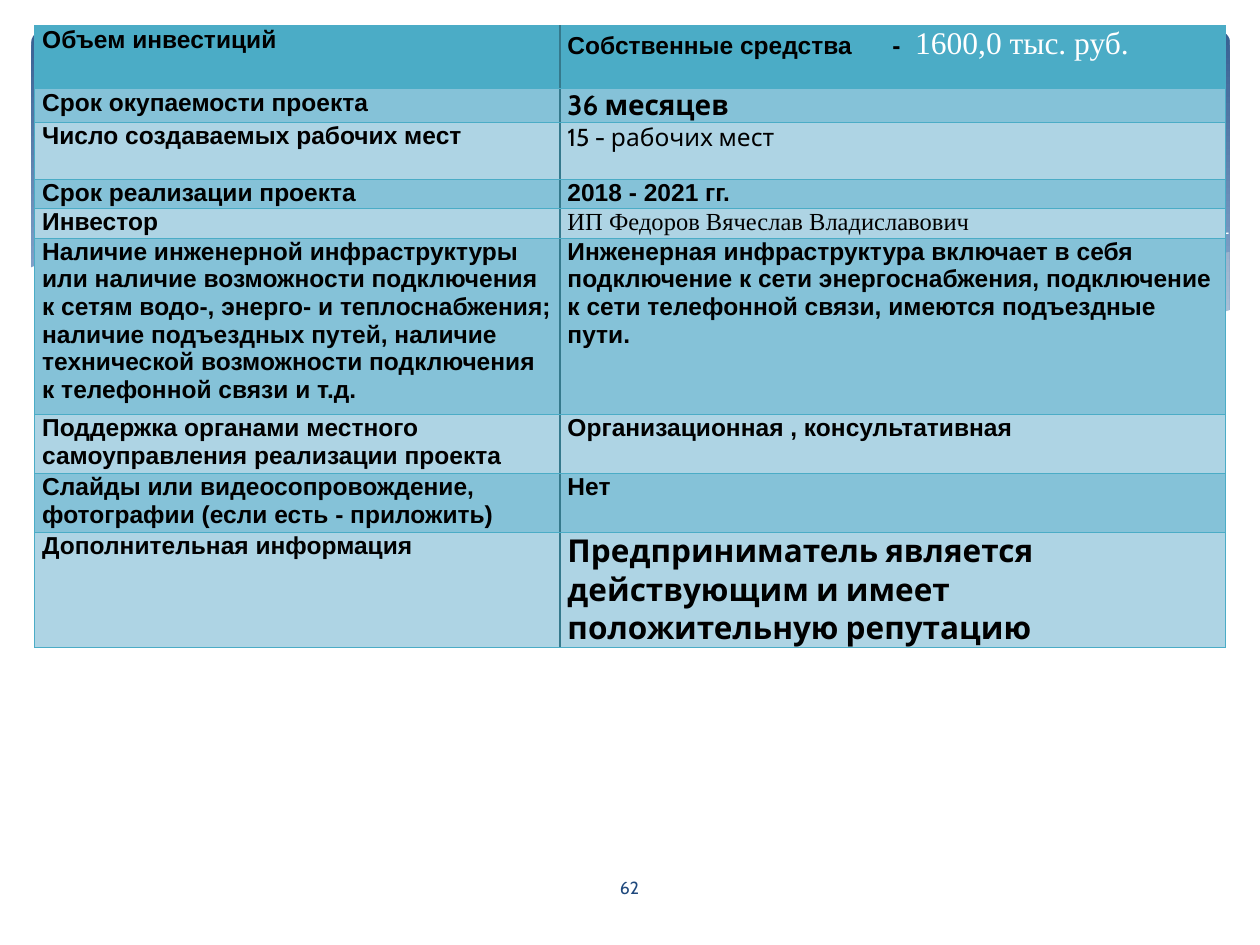
from lxml.etree import SubElement
from pptx import Presentation
from pptx.dml.color import RGBColor
from pptx.enum.shapes import MSO_SHAPE
from pptx.enum.text import MSO_ANCHOR, PP_ALIGN
from pptx.oxml.ns import qn
from pptx.util import Pt


def rgb(value):
    return RGBColor.from_string(value)


def add_run(p, text, font, size, bold, color):
    r = p.add_run()
    r.text = text
    r.font.name = font
    r.font.size = Pt(size)
    r.font.bold = bold
    r.font.color.rgb = rgb(color)


prs = Presentation()
prs.slide_width, prs.slide_height = Pt(720), Pt(540)
s = prs.slides.add_slide(prs.slide_layouts[6])

sp = s.shapes.add_shape(MSO_SHAPE.ROUNDED_RECTANGLE, Pt(18), Pt(18), Pt(684.7), Pt(194.4))
sp.adjustments[0] = 0.03
sp.shadow.inherit = False
sp.line.fill.background()
sp.fill.gradient()
sp.fill.gradient_angle = 270
for stop, (pos, color) in zip(sp.fill.gradient_stops, [(0, "376092"), (0.9, "95B3D7")]):
    stop.position = pos
    stop.color.rgb = rgb(color)

waves = [
    ("EEECE1", 29, [(702.7, 144), (682, 147), (652, 153), (620, 161), (561, 174), (476, 191),
                    (508, 195), (545, 198.5), (586, 200), (628, 197), (668, 190), (702.7, 178)]),
    ("EEECE1", 40, [(643, 197), (603, 191), (558, 183), (508, 173), (453, 160), (410, 150),
                    (370, 143), (335, 137.5), (302, 134), (260, 133), (225, 135.5), (206, 137.5),
                    (246, 143), (291, 152), (354, 167), (420, 181), (468, 190), (510, 196),
                    (548, 199), (589, 200), (624, 199)]),
    ("FFFFFF", 100, [(703.4, 177), (670, 188.5), (639, 195), (602, 198.5), (560, 199), (510, 195.5),
                     (451, 186), (381, 172), (322, 158), (263, 145), (210, 137), (166, 133),
                     (127, 132.5), (86, 135), (55, 140.5), (33, 146), (16.6, 153.4),
                     (16.6, 236.9), (703.4, 236.9)]),
]
curves = [
    [(222.5, 140.4), (241, 137), (278, 134.5), (325, 135), (384, 139.5), (438, 147),
     (500, 157.5), (547, 167.8), (598, 180.5), (653, 195.8)],
    [(441.4, 185), (484, 173.5), (538, 160.5), (602, 147), (644, 139.5), (685, 134.5), (702, 133.2)],
]
outlines = waves[:2] + [(None, 0, points) for points in curves] + waves[2:]
for color, alpha, points in outlines:
    points = [(Pt(x), Pt(y)) for x, y in points]
    builder = s.shapes.build_freeform(*points[0])
    builder.add_line_segments(points[1:], close=color is not None)
    sp = builder.convert_to_shape()
    sp.shadow.inherit = False
    if color:
        sp.line.fill.background()
        sp.fill.solid()
        sp.fill.fore_color.rgb = rgb(color)
        if alpha < 100:
            clr = sp.fill._xPr.find(qn("a:solidFill"))[0]
            SubElement(clr, qn("a:alpha"), val=str(alpha * 1000))
    else:
        sp.fill.background()
        sp.line.color.rgb = rgb("FFFFFF")
        sp.line.width = Pt(0)

sp = s.shapes.add_textbox(Pt(314), Pt(492.5), Pt(91.4), Pt(28.8))
tf = sp.text_frame
tf.word_wrap = True
tf.vertical_anchor = MSO_ANCHOR.MIDDLE
p = tf.paragraphs[0]
p.alignment = PP_ALIGN.CENTER
add_run(p, "62", "Cabin", 10, False, "1F497D")

arial = ("Arial", 14, True, "000000")
rows = [
    (36, "Объем инвестиций", [("Собственные средства\t-\t", *arial),
                              ("1600,0 тыс. руб.", "Times New Roman", 18, False, "FFFFFF")]),
    (19.2, "Срок окупаемости проекта", [("36 месяцев", "Cabin", 16, True, "000000")]),
    (32.4, "Число создаваемых рабочих мест", [("15 - рабочих мест", "Cabin", 14, False, "000000")]),
    (16, "Срок реализации проекта", [("2018 - 2021 гг.", *arial)]),
    (16, "Инвестор",
     [("ИП Федоров Вячеслав Владиславович", "Times New Roman", 14, False, "000000")]),
    (96.2, "Наличие инженерной инфраструктуры или наличие возможности подключения к сетям "
           "водо-, энерго- и теплоснабжения; наличие подъездных путей, наличие технической "
           "возможности подключения к телефонной связи и т.д.",
     [("Инженерная инфраструктура включает в себя подключение к сети энергоснабжения, "
       "подключение к сети телефонной связи, имеются подъездные пути.", *arial)]),
    (32.4, "Поддержка органами местного самоуправления реализации проекта",
     [("Организационная , консультативная", *arial)]),
    (32.2, "Слайды или видеосопровождение, фотографии (если есть - приложить)",
     [("Нет", *arial)]),
    (65.7, "Дополнительная информация",
     [("Предприниматель является действующим и имеет положительную репутацию",
       "Cabin", 18, True, "000000")]),
]
height = sum(row[0] for row in rows)
tbl = s.shapes.add_table(len(rows), 2, Pt(19.8), Pt(14.8), Pt(680.4), Pt(height)).table
tbl.first_row = tbl.horz_banding = False
tbl.columns[0].width, tbl.columns[1].width = Pt(300.2), Pt(380.2)
for i, (row_height, label, value) in enumerate(rows):
    tbl.rows[i].height = Pt(row_height)
    fill = "4BACC6" if i == 0 else "85C2D8" if i % 2 else "AED4E4"
    for j, runs in enumerate([[(label, *arial)], value]):
        cell = tbl.cell(i, j)
        cell.margin_left = cell.margin_right = Pt(4.3)
        cell.margin_top = cell.margin_bottom = Pt(0)
        tcPr = cell._tc.get_or_add_tcPr()
        for side in ("lnL", "lnR", "lnT", "lnB"):
            inner = side == ("lnR", "lnL")[j]
            ln = SubElement(tcPr, qn("a:" + side), w=str(Pt(1.25 if inner else 0.75)))
            solid = SubElement(ln, qn("a:solidFill"))
            SubElement(solid, qn("a:srgbClr"), val="35798C" if inner else "4BACC6")
        cell.fill.solid()
        cell.fill.fore_color.rgb = rgb(fill)
        p = cell.text_frame.paragraphs[0]
        if len(runs) > 1:
            tabs = SubElement(p._p.get_or_add_pPr(), qn("a:tabLst"))
            for pos in (185.7, 198.7):
                SubElement(tabs, qn("a:tab"), pos=str(Pt(pos)), algn="l")
        for run in runs:
            add_run(p, *run)

prs.save("out.pptx")
